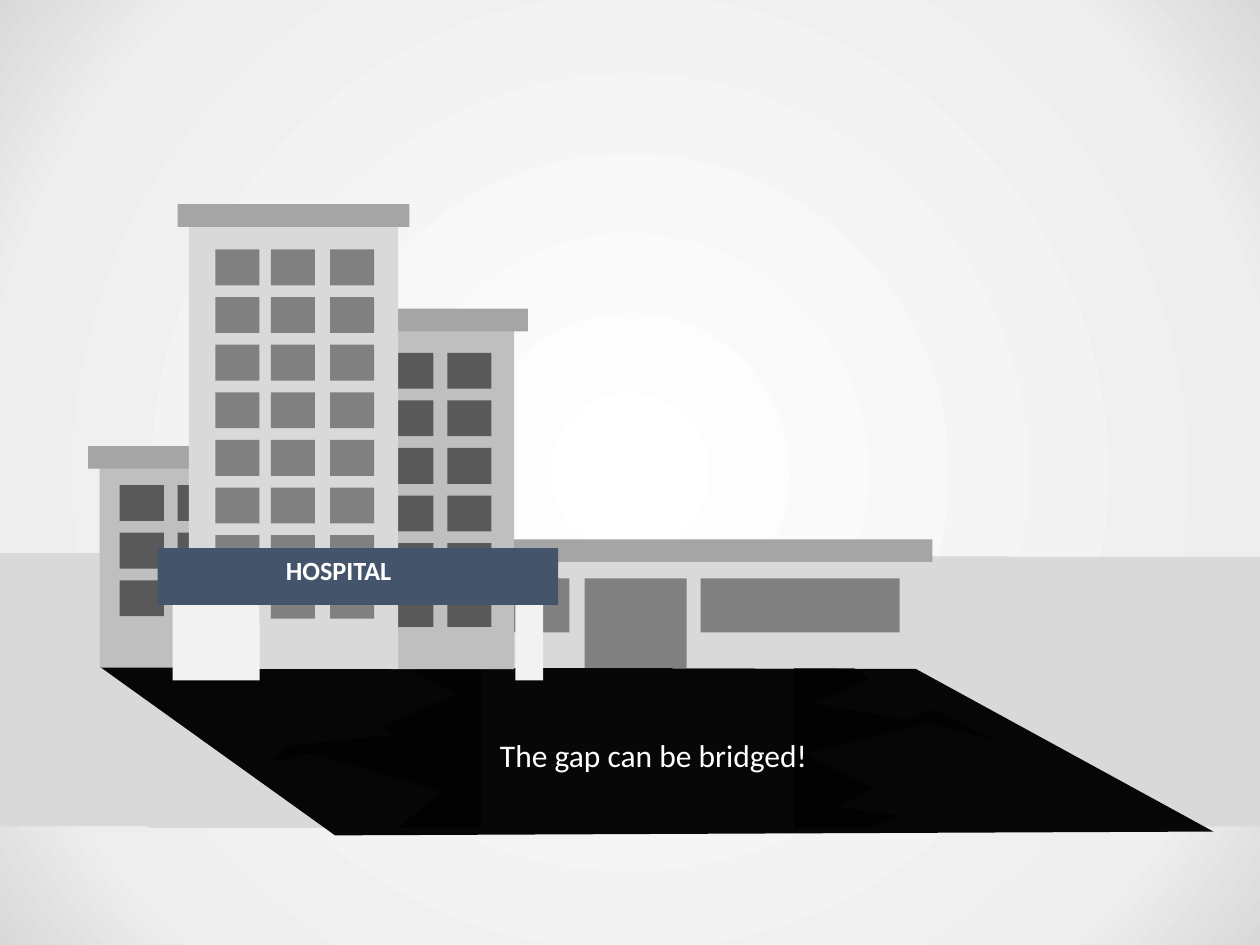
"""Build a slide with a hospital standing at the edge of a gap in the ground."""
from dataclasses import dataclass

from lxml import etree
from pptx import Presentation
from pptx.dml.color import RGBColor
from pptx.enum.shapes import MSO_SHAPE
from pptx.enum.text import MSO_AUTO_SIZE
from pptx.oxml import parse_xml
from pptx.oxml.ns import nsdecls, qn
from pptx.util import Cm, Pt

RECT = MSO_SHAPE.RECTANGLE
FIT = MSO_AUTO_SIZE.SHAPE_TO_FIT_TEXT
UNIT = Cm(0.0254)


@dataclass(frozen=True)
class Theme:
    font: str = "Calibri"
    sign_size: int = 15
    caption_size: int = 18
    white: str = "FFFFFF"
    glow: str = "EEEEEE"
    light: str = "D9D9D9"
    wing: str = "BFBFBF"
    roof: str = "A5A5A5"
    window: str = "808080"
    dark: str = "595959"
    black: str = "000000"
    pillar: str = "F2F2F2"
    sign: str = "44546A"


T = Theme()


def paint(sp, color):
    sp.shadow.inherit = False
    sp.line.fill.background()
    sp.fill.solid()
    sp.fill.fore_color.rgb = RGBColor.from_string(color)
    return sp


def add_text(shapes, text, box, size, color=T.white, bold=False):
    tf = shapes.add_textbox(*(v * UNIT for v in box)).text_frame
    tf.word_wrap = False
    tf.auto_size = FIT
    r = tf.paragraphs[0].add_run()
    r.text = text
    r.font.name, r.font.size, r.font.bold = T.font, Pt(size), bold
    r.font.color.rgb = RGBColor.from_string(color)


prs = Presentation()
prs.slide_width, prs.slide_height = Cm(25.4), Cm(19.05)
s = prs.slides.add_slide(prs.slide_layouts[6])

s.background.fill.gradient()
grad = next(s._element.iter(qn("a:gradFill")))
stops = "".join(
    f'<a:gs pos="{pos * 1000}"><a:srgbClr val="{color}"/></a:gs>'
    for pos, color in [(0, T.white), (81, T.glow), (100, T.light)])
grad.getparent().replace(grad, parse_xml(
    f'<a:gradFill {nsdecls("a")} rotWithShape="1"><a:gsLst>{stops}</a:gsLst>'
    '<a:path path="circle"><a:fillToRect l="50000" t="50000" r="50000" b="50000"/>'
    '</a:path></a:gradFill>'))

ground = s.shapes.add_group_shape()
hospital = s.shapes.add_group_shape()

crack_blocks = [(T.dark, 199, 439, 183, 218), (T.dark, 630, 442, 171, 215)]
ground_outlines = [
    (T.light, [(118, 439), (358, 439), (382, 477), (327, 534), (361, 551), (302, 577),
               (311, 583), (225, 592), (215, 605), (247, 598), (350, 628), (316, 657),
               (118, 657)]),
    (T.light, [(882, 442), (642, 442), (630, 495), (690, 539), (647, 558), (718, 571),
               (741, 563), (796, 590), (738, 574), (639, 598), (694, 626), (664, 640),
               (713, 647), (693, 657), (882, 657)]),
]
edge_blocks = [(T.light, 856, 442, 144, 214), (T.light, -1, 439, 144, 217)]
gap_outline = (T.black, [(79, 529), (266, 663), (963, 660), (727, 531)])

right_windows, left_windows, tower_windows = [
    [(color, x, top + 37.8 * row, 35, 28.5) for x in columns for row in range(rows)]
    for color, columns, top, rows in [
        (T.dark, (309, 355), 280, 6),
        (T.dark, (95, 141), 385, 3),
        (T.window, (171, 215, 262), 198, 8)]]
hospital_blocks = [
    (T.light, 390, 442, 335, 88),
    (T.roof, 368, 428, 372, 18),
    (T.window, 556, 459, 158, 43),
    (T.window, 387, 459, 65, 43),
    (T.window, 464, 459, 81, 71),
    (T.wing, 79, 364, 85, 166),
    (T.roof, 70, 354, 91, 18),
    (T.wing, 310, 262, 98, 269),
    *right_windows,
    *left_windows,
    (T.roof, 235, 245, 184, 18),
    (T.light, 150, 178, 166, 353),
    *tower_windows,
    (T.roof, 141, 162, 184, 18),
    (T.pillar, 137, 474, 69, 66),
    (T.pillar, 409, 474, 22, 66),
    (T.sign, 125, 435, 318, 45),
]

for group, outlines, blocks in [(ground, [], crack_blocks),
                                (ground, ground_outlines, edge_blocks),
                                (hospital, [gap_outline], hospital_blocks)]:
    for color, points in outlines:
        fb = group.shapes.build_freeform(*points[0], scale=UNIT)
        fb.add_line_segments(points[1:], close=True)
        sp = paint(fb.convert_to_shape(), color)
        if color == T.black:
            clr = next(sp._element.spPr.iter(qn("a:srgbClr")))
            etree.SubElement(clr, qn("a:alpha"), val="97000")
    for color, *box in blocks:
        paint(group.shapes.add_shape(RECT, *(round(v * UNIT) for v in box)), color)

add_text(hospital.shapes, "HOSPITAL", (217, 435, 105, 35), T.sign_size, bold=True)
add_text(s.shapes, "The gap can be bridged!", (387, 579, 267, 40), T.caption_size)

prs.save("out.pptx")
